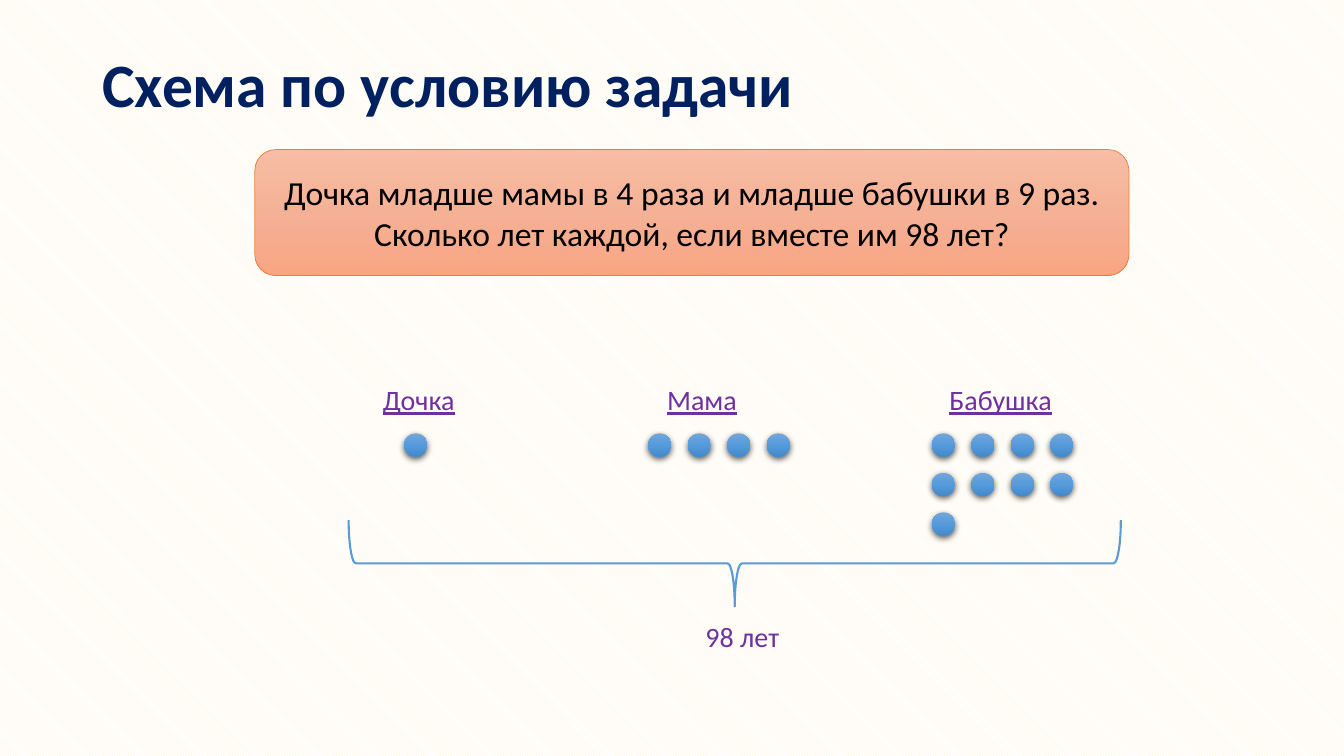
"""Builds a slide with a dot scheme for an age problem."""
from pptx import Presentation
from pptx.dml.color import RGBColor
from pptx.enum.dml import MSO_PATTERN
from pptx.enum.shapes import MSO_SHAPE
from pptx.enum.text import MSO_ANCHOR, MSO_AUTO_SIZE, PP_ALIGN
from pptx.oxml import parse_xml
from pptx.util import Pt

ROUND, OVAL, BRACE = MSO_SHAPE.ROUNDED_RECTANGLE, MSO_SHAPE.OVAL, MSO_SHAPE.RIGHT_BRACE
MIDDLE, CENTER = MSO_ANCHOR.MIDDLE, PP_ALIGN.CENTER
GROW, DIAG = MSO_AUTO_SIZE.SHAPE_TO_FIT_TEXT, MSO_PATTERN.LIGHT_DOWNWARD_DIAGONAL
NS = 'xmlns:a="http://schemas.openxmlformats.org/drawingml/2006/main"'

TITLE = "Схема по условию задачи"
TASK = ("Дочка младше мамы в 4 раза и младше бабушки в 9 раз. "
        "Сколько лет каждой, если вместе им 98 лет?")
TOTAL = "98 лет"
PEOPLE = [
    {"name": "Дочка", "parts": 1, "left": 266.4, "wide": 66.2, "dots": 288.7},
    {"name": "Мама", "parts": 4, "left": 469.4, "wide": 66.2, "dots": 463},
    {"name": "Бабушка", "parts": 9, "left": 671, "wide": 90.7, "dots": 665.6},
]
THEME = {
    "font": "Calibri", "title": 44, "task": 24, "label": 20,
    "navy": "002060", "black": "000000", "purple": "7030A0",
    "orange": "ED7D31", "blue": "5B9BD5",
    "paper": "FFFFFF", "stripe": "FFF2CC",
    "peach": ("F7BDA5", "F5B196", "F8A582"),
    "dot": ("71A6DB", "559BDB", "448ACA"),
}
ROW, DOT, STEP, TOP, LABEL = 4, 16.6, 28.2, 309.6, 270


def color(name):
    return RGBColor.from_string(THEME[name])


def box(points):
    return [Pt(p) for p in points]


def write(frame, text, size, ink, bold=None, under=None):
    part = frame.paragraphs[0]
    run = part.add_run()
    run.text = text
    font = run.font
    font.name, font.size = THEME["font"], Pt(THEME[size])
    font.bold, font.underline = bold, under
    font.color.rgb = color(ink)
    return part


def label(shapes, text, left, top, wide, under=None):
    frame = shapes.add_textbox(*box((left, top, wide, 31.5))).text_frame
    frame.word_wrap, frame.auto_size = False, GROW
    write(frame, text, "label", "purple", under=under)


def shade(shape, name):
    stops = "".join(f'<a:gs pos="{i * 50000}"><a:srgbClr val="{c}"/></a:gs>'
                    for i, c in enumerate(THEME[name]))
    shape._element.spPr.prstGeom.addnext(parse_xml(
        f'<a:gradFill {NS} rotWithShape="1"><a:gsLst>{stops}</a:gsLst>'
        '<a:lin ang="5400000" scaled="0"/></a:gradFill>'))


def dot(shapes, left, top):
    shape = shapes.add_shape(OVAL, *box((left, top, DOT, DOT)))
    shade(shape, "dot")
    shape.line.fill.background()
    shape._element.spPr.append(parse_xml(
        f'<a:effectLst {NS}><a:outerShdw blurRad="{Pt(4.5)}" dist="{Pt(1.5)}" '
        'dir="5400000" algn="ctr" rotWithShape="0"><a:srgbClr val="000000">'
        '<a:alpha val="63000"/></a:srgbClr></a:outerShdw></a:effectLst>'))


def main():
    deck = Presentation()
    deck.slide_width, deck.slide_height = Pt(960), Pt(540)
    slide = deck.slides.add_slide(deck.slide_layouts[6])
    shapes = slide.shapes

    back = slide.background.fill
    back.patterned()
    back.pattern = DIAG
    back.fore_color.rgb, back.back_color.rgb = color("stripe"), color("paper")

    frame = shapes.add_textbox(*box((66, 28.8, 828, 67))).text_frame
    frame.word_wrap, frame.vertical_anchor = True, MIDDLE
    write(frame, TITLE, "title", "navy", bold=True).line_spacing = 0.9

    card = shapes.add_shape(ROUND, *box((182, 106.8, 624.4, 90)))
    card.shadow.inherit = False
    shade(card, "peach")
    card.line.color.rgb, card.line.width = color("orange"), Pt(0.5)
    frame = card.text_frame
    frame.word_wrap, frame.vertical_anchor = True, MIDDLE
    write(frame, TASK, "task", "black").alignment = CENTER

    for who in PEOPLE:
        label(shapes, who["name"], who["left"], LABEL, who["wide"], under=True)
        count = who["parts"]
        home = shapes.add_group_shape().shapes if count > 1 else shapes
        for i in range(count):
            row, col = divmod(i, ROW)
            dot(home, who["dots"] + col * STEP, TOP + row * STEP)

    brace = shapes.add_shape(BRACE, *box((494, 126.6, 61.6, 551.6)))
    brace.rotation = 90
    brace.shadow.inherit = False
    brace.fill.background()
    brace.line.color.rgb, brace.line.width = color("blue"), Pt(1.5)
    label(shapes, TOTAL, 496.8, 438.6, 67.7)

    deck.save("out.pptx")


if __name__ == "__main__":
    main()
